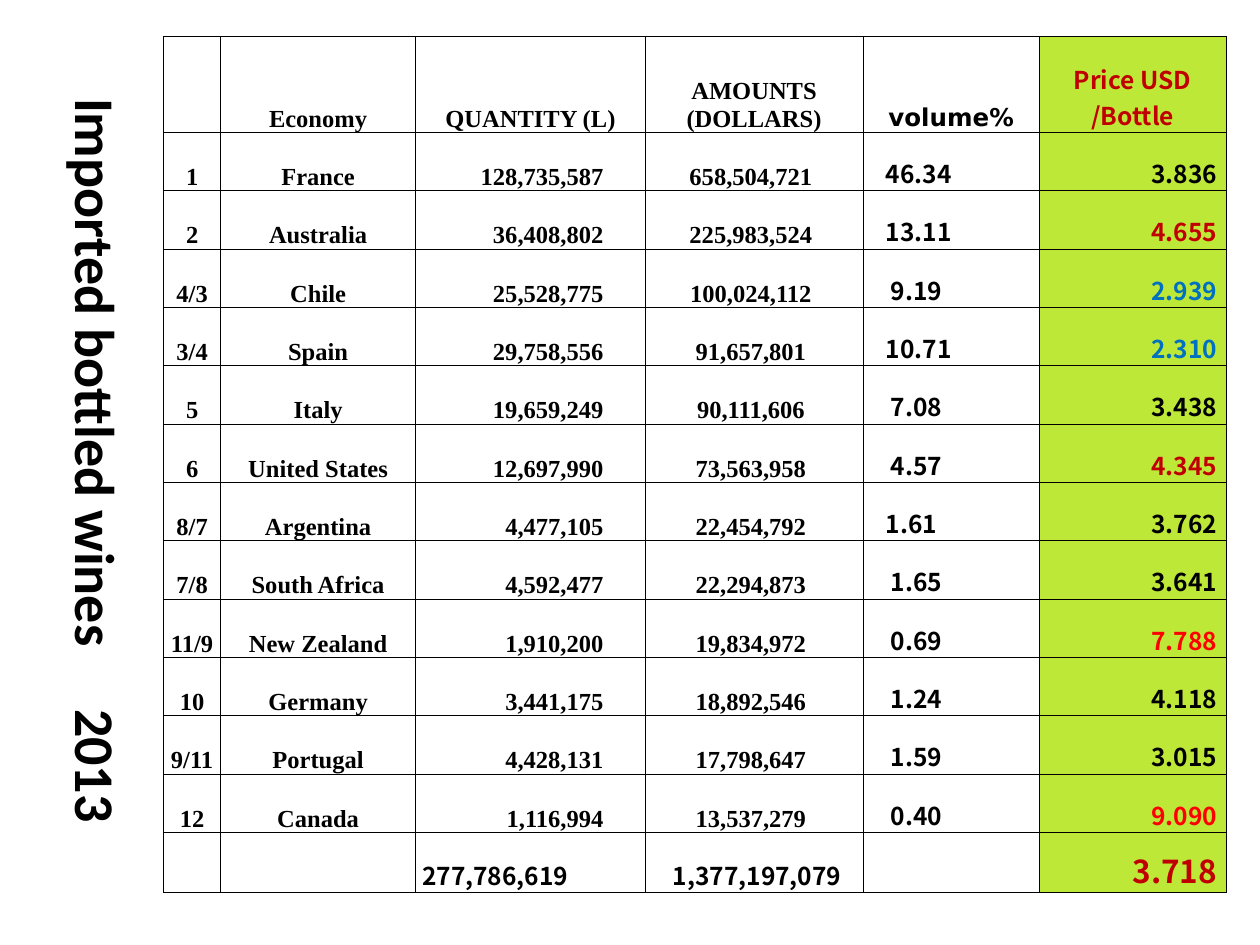
from dataclasses import dataclass, replace

from lxml.etree import SubElement
from pptx import Presentation
from pptx.dml.color import RGBColor
from pptx.enum.text import MSO_ANCHOR as Anchor, MSO_AUTO_SIZE as AutoSize, PP_ALIGN as Align
from pptx.oxml import parse_xml
from pptx.oxml.ns import qn
from pptx.util import Inches, Pt

BLACK, DARK_RED, RED, BLUE, LIME = "000000", "C00000", "FF0000", "0070C0", "BEE838"
SERIF, SANS, WIDE = "Times New Roman", "Noto Sans CJK SC", "DejaVu Sans"
DRAWING_NS = "http://schemas.openxmlformats.org/drawingml/2006/main"

COLUMN_WIDTHS = [0.45, 1.55, 1.82, 1.73, 1.4, 1.48]
HEADER_HEIGHT, TOTAL_HEIGHT, COUNTRIES_HEIGHT = 0.76, 0.48, 5.56
PRICE_COLUMN = 5


@dataclass(frozen=True)
class CellStyle:
    font: str = SERIF
    align: Align = Align.CENTER
    size: int = 14
    color: str = BLACK
    left: float = 0.01
    right: float = 0.01


CENTRED = CellStyle()
QUANTITY = CellStyle(align=Align.RIGHT, right=0.33)
AMOUNT = CellStyle(right=0.06)
VOLUME = CellStyle(SANS, Align.LEFT, left=0.18)
PRICE = CellStyle(SANS, Align.RIGHT, right=0.07)

HEADERS = [
    ("", CENTRED),
    ("Economy", CENTRED),
    ("QUANTITY (L)", CENTRED),
    ("AMOUNTS (DOLLARS)", CENTRED),
    ("volume%", CellStyle(WIDE)),
    ("Price USD\n/Bottle", CellStyle(SANS, color=DARK_RED)),
]
COUNTRIES = [
    ("1", "France", "128,735,587", "658,504,721", "46.34", "3.836"),
    ("2", "Australia", "36,408,802", "225,983,524", "13.11", "4.655"),
    ("4/3", "Chile", "25,528,775", "100,024,112", "9.19", "2.939"),
    ("3/4", "Spain", "29,758,556", "91,657,801", "10.71", "2.310"),
    ("5", "Italy", "19,659,249", "90,111,606", "7.08", "3.438"),
    ("6", "United States", "12,697,990", "73,563,958", "4.57", "4.345"),
    ("8/7", "Argentina", "4,477,105", "22,454,792", "1.61", "3.762"),
    ("7/8", "South Africa", "4,592,477", "22,294,873", "1.65", "3.641"),
    ("11/9", "New Zealand", "1,910,200", "19,834,972", "0.69", "7.788"),
    ("10", "Germany", "3,441,175", "18,892,546", "1.24", "4.118"),
    ("9/11", "Portugal", "4,428,131", "17,798,647", "1.59", "3.015"),
    ("12", "Canada", "1,116,994", "13,537,279", "0.40", "9.090"),
]
TOTALS = [
    ("", CENTRED),
    ("", CENTRED),
    ("277,786,619", CellStyle(SANS, Align.LEFT, left=0.05)),
    ("1,377,197,079", CellStyle(SANS, Align.LEFT, left=0.22)),
    ("", CENTRED),
    ("3.718", replace(PRICE, size=18, color=DARK_RED)),
]


def rgb(code: str) -> RGBColor:
    return RGBColor.from_string(code)


def set_all(target, values: dict) -> None:
    for name, value in values.items():
        setattr(target, name, value)


def price_color(price: str) -> str:
    """Red for dear wines, blue for cheap ones."""
    amount = float(price)
    if amount > 7:
        return RED
    if amount > 4.3:
        return DARK_RED
    return BLUE if amount < 3 else BLACK


def country_cells(country: tuple) -> list[tuple[str, CellStyle]]:
    volume, price = country[4:]
    indented = len(volume) == 4 and volume != "1.61"
    styles = [
        CENTRED, CENTRED, QUANTITY, AMOUNT,
        replace(VOLUME, left=0.22) if indented else VOLUME,
        replace(PRICE, color=price_color(price)),
    ]
    return list(zip(country, styles))


def add_borders(cell) -> None:
    properties = cell._tc.get_or_add_tcPr()
    for position, side in enumerate(("lnL", "lnR", "lnT", "lnB")):
        properties.insert(position, parse_xml(
            f'<a:{side} xmlns:a="{DRAWING_NS}" w="{Pt(0.5)}"><a:solidFill>'
            f'<a:srgbClr val="{BLACK}"/></a:solidFill></a:{side}>'))


def fill_cell(cell, text: str, style: CellStyle, background: str | None) -> None:
    set_all(cell, {
        "vertical_anchor": Anchor.BOTTOM,
        "margin_left": Inches(style.left),
        "margin_right": Inches(style.right),
        "margin_top": Inches(0.01),
        "margin_bottom": Inches(0),
    })
    if background:
        cell.fill.solid()
        cell.fill.fore_color.rgb = rgb(background)
    else:
        cell.fill.background()
    add_borders(cell)
    cell.text = text
    for paragraph in cell.text_frame.paragraphs:
        paragraph.alignment = style.align
        for run in paragraph.runs:
            set_all(run.font, {"name": style.font, "size": Pt(style.size), "bold": True})
            run.font.color.rgb = rgb(style.color)


def add_wine_table(slide) -> None:
    rows = [HEADERS, *map(country_cells, COUNTRIES), TOTALS]
    country_height = COUNTRIES_HEIGHT / len(COUNTRIES)
    heights = [HEADER_HEIGHT, *[country_height] * len(COUNTRIES), TOTAL_HEIGHT]
    table = slide.shapes.add_table(
        len(rows), len(COLUMN_WIDTHS), Inches(1.3), Inches(0.29),
        Inches(sum(COLUMN_WIDTHS)), Inches(sum(heights))).table
    set_all(table, {"first_row": False, "horz_banding": False})
    for column, width in zip(table.columns, COLUMN_WIDTHS):
        column.width = Inches(width)
    for r, (cells, height) in enumerate(zip(rows, heights)):
        table.rows[r].height = Inches(height)
        for c, (text, style) in enumerate(cells):
            fill_cell(table.cell(r, c), text, style, LIME if c == PRICE_COLUMN else None)


def add_vertical_title(slide) -> None:
    """Title read from top to bottom, with a tab stop before the year."""
    frame = slide.shapes.add_textbox(
        Inches(0.35), Inches(0.68), Inches(0.74), Inches(6.46)).text_frame
    set_all(frame, {"word_wrap": True, "auto_size": AutoSize.SHAPE_TO_FIT_TEXT})
    frame._txBody.bodyPr.set("vert", "eaVert")
    paragraph = frame.paragraphs[0]
    tab_stops = SubElement(paragraph._p.get_or_add_pPr(), qn("a:tabLst"))
    SubElement(tab_stops, qn("a:tab"), pos=str(Inches(4.85)), algn="l")
    title = paragraph.add_run()
    title.text = "Imported bottled wines\t2013"
    set_all(title.font, {"name": "Calibri", "size": Pt(32), "bold": True})
    title.font.color.rgb = rgb(BLACK)


def main() -> None:
    deck = Presentation()
    set_all(deck, {"slide_width": Inches(10), "slide_height": Inches(7.5)})
    slide = deck.slides.add_slide(deck.slide_layouts[6])
    add_wine_table(slide)
    add_vertical_title(slide)
    deck.save("out.pptx")


if __name__ == "__main__":
    main()
